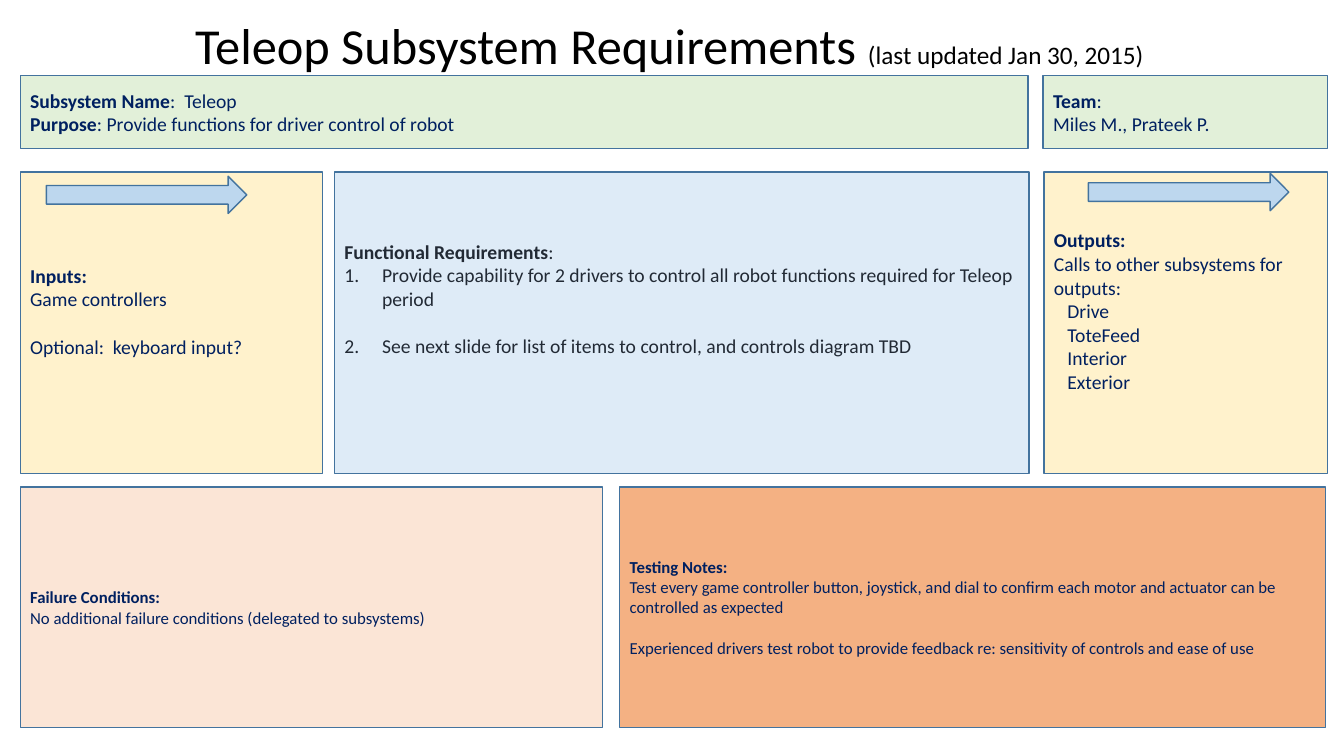
"""Build the Teleop subsystem requirements slide."""
from lxml.etree import SubElement
from pptx import Presentation
from pptx.dml.color import RGBColor
from pptx.enum.shapes import MSO_SHAPE
from pptx.enum.text import MSO_ANCHOR, MSO_AUTO_SIZE, PP_ALIGN
from pptx.oxml.ns import qn
from pptx.util import Cm, Pt

COLORS = {
    "title": "000000", "navy": "002060", "slate": "222A35", "outline": "43739E",
    "green": "E2F0D9", "yellow": "FFF2CC", "blue": "DEEBF7", "arrow": "BDD7EE",
    "peach": "FBE5D6", "orange": "F4B183",
}
FONT = "Calibri"
LINE_HEIGHT = 1.22
INSET = Cm(0.13)

TITLE = [("Teleop Subsystem Requirements ", 36), ("(last updated Jan 30, 2015)", 18)]
TITLE_BOX = (1.68, 0.36, 30.38, 1.7)

ROWS = {"header": (1.9, 1.85), "flow": (4.34, 7.59), "checks": (12.27, 6.07)}

# Each paragraph is (style, bold text, regular text); "lift" counts lines kept free below.
PANELS = [
    {"row": "flow", "left": 8.43, "width": 17.5, "fill": "blue", "ink": "slate",
     "size": 14, "lift": 2, "text": [
         ("plain", "Functional Requirements", ":"),
         ("number", "", "Provide capability for 2 drivers to control all robot functions "
                        "required for Teleop period"),
         ("number spaced", "", "See next slide for list of items to control, and controls "
                               "diagram TBD")]},
    {"row": "checks", "left": 0.51, "width": 14.68, "fill": "peach", "ink": "navy",
     "size": 12, "lift": 0, "text": [
         ("plain", "Failure Conditions:", ""),
         ("plain", "", "No additional failure conditions (delegated to subsystems)")]},
    {"row": "header", "left": 0.51, "width": 25.4, "fill": "green", "ink": "navy",
     "size": 14, "lift": 0, "text": [
         ("plain", "Subsystem Name", ":  Teleop"),
         ("plain", "Purpose", ": Provide functions for driver control of robot")]},
    {"row": "flow", "left": 0.51, "width": 7.62, "fill": "yellow", "ink": "navy",
     "size": 14, "lift": 1, "text": [
         ("plain", "Inputs:", ""),
         ("plain", "", "Game controllers"),
         ("spaced", "", "Optional:  keyboard input?")]},
    {"row": "flow", "left": 26.31, "width": 7.14, "fill": "yellow", "ink": "navy",
     "size": 14, "lift": 1, "text": [
         ("plain", "Outputs:", ""),
         ("plain", "", "Calls to other subsystems for outputs:"),
         ("nested", "", "Drive"),
         ("nested", "", "ToteFeed"),
         ("nested", "", "Interior"),
         ("nested", "", "Exterior")]},
    {"row": "checks", "left": 15.62, "width": 17.78, "fill": "orange", "ink": "navy",
     "size": 12, "lift": 0, "text": [
         ("plain", "Testing Notes:", ""),
         ("plain", "", "Test every game controller button, joystick, and dial to confirm each "
                       "motor and actuator can be controlled as expected"),
         ("spaced", "", "Experienced drivers test robot to provide feedback re: sensitivity "
                        "of controls and ease of use")]},
    {"row": "header", "left": 26.29, "width": 7.16, "fill": "green", "ink": "navy",
     "size": 14, "lift": 0, "text": [
         ("plain", "Team", ":"),
         ("plain", "", "Miles M., Prateek P.")]},
]
ARROWS = [(1.17, 4.44), (27.43, 4.37)]
ARROW_SIZE = (5.05, 0.94)


def add_run(paragraph, text, size, ink, bold=False):
    run = paragraph.add_run()
    run.text = text
    run.font.name = FONT
    run.font.size = Pt(size)
    run.font.bold = bold
    run.font.color.rgb = RGBColor.from_string(COLORS[ink])


def add_block(slide, preset, box, fill):
    block = slide.shapes.add_shape(preset, *map(Cm, box))
    block.shadow.inherit = False
    block.fill.solid()
    block.fill.fore_color.rgb = RGBColor.from_string(COLORS[fill])
    block.line.color.rgb = RGBColor.from_string(COLORS["outline"])
    block.line.width = Pt(1)
    return block


def style_paragraph(paragraph, style, size):
    paragraph.alignment = PP_ALIGN.LEFT
    properties = paragraph._p.get_or_add_pPr()
    if "spaced" in style:
        paragraph.space_before = Pt(round(size * LINE_HEIGHT, 1))
    if "nested" in style:
        properties.set("marL", str(Cm(0.34)))
    if "number" in style:
        properties.set("marL", str(Cm(0.95)))
        properties.set("indent", str(-Cm(0.95)))
        SubElement(properties, qn("a:buFont"), typeface="+mj-lt")
        SubElement(properties, qn("a:buAutoNum"), type="arabicPeriod")


def add_panel(slide, panel):
    top, height = ROWS[panel["row"]]
    box = (panel["left"], top, panel["width"], height)
    frame = add_block(slide, MSO_SHAPE.RECTANGLE, box, panel["fill"]).text_frame
    frame.word_wrap = True
    frame.vertical_anchor = MSO_ANCHOR.MIDDLE
    frame.margin_bottom = INSET + Pt(panel["lift"] * panel["size"] * LINE_HEIGHT)
    for index, (style, strong, regular) in enumerate(panel["text"]):
        paragraph = frame.add_paragraph() if index else frame.paragraphs[0]
        style_paragraph(paragraph, style, panel["size"])
        for text, bold in ((strong, True), (regular, False)):
            if text:
                add_run(paragraph, text, panel["size"], panel["ink"], bold)


def add_title(slide):
    title = slide.shapes.title
    title.left, title.top, title.width, title.height = map(Cm, TITLE_BOX)
    frame = title.text_frame
    frame.auto_size = MSO_AUTO_SIZE.NONE
    frame.vertical_anchor = MSO_ANCHOR.MIDDLE
    heading = frame.paragraphs[0]
    heading.alignment = PP_ALIGN.CENTER
    heading.line_spacing = 0.9
    for text, size in TITLE:
        add_run(heading, text, size, "title")


def main():
    deck = Presentation()
    deck.slide_width, deck.slide_height = Cm(33.87), Cm(19.05)
    slide = deck.slides.add_slide(deck.slide_layouts.get_by_name("Title Only"))
    add_title(slide)
    for panel in PANELS:
        add_panel(slide, panel)
    for corner in ARROWS:
        add_block(slide, MSO_SHAPE.RIGHT_ARROW, corner + ARROW_SIZE, "arrow")
    deck.save("out.pptx")


if __name__ == "__main__":
    main()
